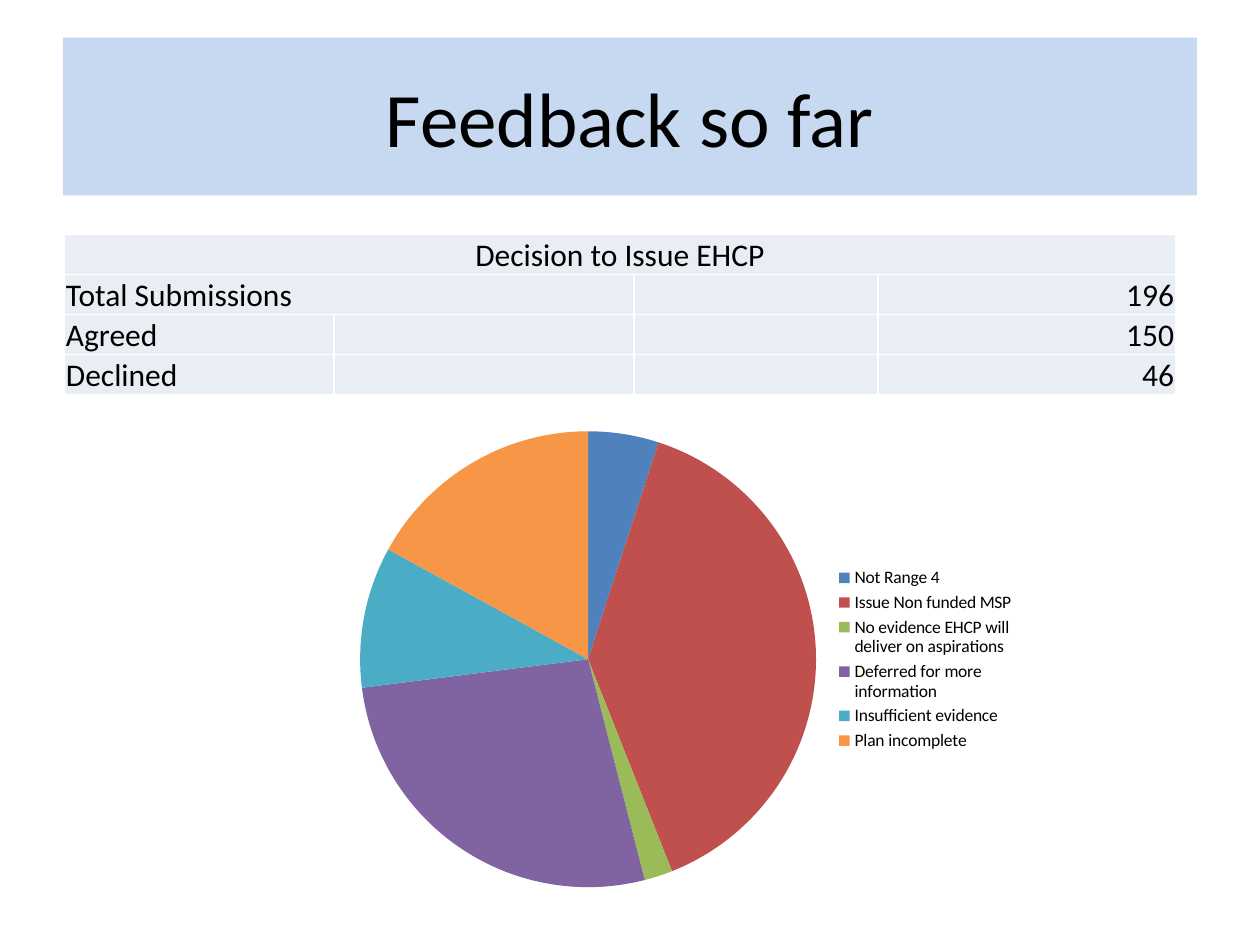
from lxml import etree
from pptx import Presentation
from pptx.chart.data import CategoryChartData
from pptx.dml.color import RGBColor
from pptx.enum.chart import XL_CHART_TYPE, XL_LEGEND_POSITION
from pptx.enum.shapes import MSO_SHAPE
from pptx.enum.text import MSO_ANCHOR, PP_ALIGN
from pptx.oxml import parse_xml
from pptx.oxml.ns import nsdecls
from pptx.util import Cm, Pt

PIE = XL_CHART_TYPE.PIE
LEGEND_RIGHT = XL_LEGEND_POSITION.RIGHT
RECTANGLE = MSO_SHAPE.RECTANGLE
MIDDLE, BOTTOM = MSO_ANCHOR.MIDDLE, MSO_ANCHOR.BOTTOM
LEFT, CENTER, RIGHT = PP_ALIGN.LEFT, PP_ALIGN.CENTER, PP_ALIGN.RIGHT

BLACK = RGBColor(0x00, 0x00, 0x00)
WHITE = RGBColor(0xFF, 0xFF, 0xFF)
BANNER_BLUE = RGBColor(0xC6, 0xD9, 0xF1)
CELL_GREY = RGBColor(0xE9, 0xED, 0xF4)
REASONS = {
    "Not Range 4": (5, RGBColor(0x4F, 0x81, 0xBD)),
    "Issue Non funded MSP": (39, RGBColor(0xC0, 0x50, 0x4D)),
    "No evidence EHCP will deliver on aspirations": (2, RGBColor(0x9B, 0xBB, 0x59)),
    "Deferred for more information": (27, RGBColor(0x80, 0x64, 0xA2)),
    "Insufficient evidence": (10, RGBColor(0x4B, 0xAC, 0xC6)),
    "Plan incomplete": (17, RGBColor(0xF7, 0x96, 0x46)),
}
DECISIONS = [("Total Submissions", 196), ("Agreed", 150), ("Declined", 46)]
COLUMN_SHARES = (2.14, 2.38, 1.94, 2.36)
CELL_FORMAT = {
    "margin_left": Cm(0.03),
    "margin_right": Cm(0.03),
    "margin_top": Cm(0.03),
    "margin_bottom": Cm(0),
    "vertical_anchor": BOTTOM,
}


def set_attributes(target, values):
    for name, value in values.items():
        setattr(target, name, value)


def style_font(font, size):
    set_attributes(font, {"name": "Calibri", "size": Pt(size), "bold": False})
    font.color.rgb = BLACK


def write_text(text_frame, text, size, alignment):
    paragraph = text_frame.paragraphs[0]
    paragraph.alignment = alignment
    run = paragraph.add_run()
    run.text = text
    style_font(run.font, size)


def add_banner(slide, left, top, width, height):
    shape = slide.shapes.add_shape(RECTANGLE, left, top, width, height)
    shape.shadow.inherit = False
    shape.fill.solid()
    shape.fill.fore_color.rgb = BANNER_BLUE
    shape.line.fill.background()
    shape.text_frame.vertical_anchor = MIDDLE
    write_text(shape.text_frame, "Feedback so far", 44, CENTER)


def add_borders(cell):
    properties = cell._tc.get_or_add_tcPr()
    for position, side in enumerate(("lnL", "lnR", "lnT", "lnB")):
        border = parse_xml(f'<a:{side} {nsdecls("a")} w="{Pt(1)}"/>')
        fill = etree.SubElement(border, border.tag.replace(side, "solidFill"))
        etree.SubElement(fill, border.tag.replace(side, "srgbClr"), val=str(WHITE))
        properties.insert(position, border)


def add_decision_table(slide, left, top, width, height):
    row_count = len(DECISIONS) + 1
    column_count = len(COLUMN_SHARES)
    frame = slide.shapes.add_table(row_count, column_count, left, top, width, height)
    table = frame.table
    for column, share in zip(table.columns, COLUMN_SHARES):
        column.width = int(width * share / sum(COLUMN_SHARES))
    for row in table.rows:
        row.height = height // row_count
    for cell in table.iter_cells():
        set_attributes(cell, CELL_FORMAT)
        cell.fill.solid()
        cell.fill.fore_color.rgb = CELL_GREY
        add_borders(cell)
    table.cell(0, 0).merge(table.cell(0, column_count - 1))
    table.cell(1, 0).merge(table.cell(1, 1))
    write_text(table.cell(0, 0).text_frame, "Decision to Issue EHCP", 18, CENTER)
    for row_index, (label, count) in enumerate(DECISIONS, 1):
        write_text(table.cell(row_index, 0).text_frame, label, 18, LEFT)
        count_cell = table.cell(row_index, column_count - 1)
        write_text(count_cell.text_frame, str(count), 18, RIGHT)


def add_reason_chart(slide, left, top, width, height):
    data = CategoryChartData()
    data.categories = list(REASONS)
    data.add_series("Series 1", [value for value, color in REASONS.values()])
    chart = slide.shapes.add_chart(PIE, left, top, width, height, data).chart
    set_attributes(chart, {"has_title": False, "has_legend": True})
    set_attributes(chart.legend, {"position": LEGEND_RIGHT, "include_in_layout": False})
    style_font(chart.font, 10)
    plot = chart.plots[0]
    plot.vary_by_categories = True
    for index, (value, color) in enumerate(REASONS.values()):
        fill = plot.series[0].points[index].format.fill
        fill.solid()
        fill.fore_color.rgb = color


def main():
    presentation = Presentation()
    set_attributes(presentation, {"slide_width": Cm(25.4), "slide_height": Cm(19.05)})
    slide = presentation.slides.add_slide(presentation.slide_layouts[6])
    add_banner(slide, Cm(1.27), Cm(0.76), Cm(22.86), Cm(3.18))
    add_decision_table(slide, Cm(1.3), Cm(4.73), Cm(22.4), Cm(3.2))
    add_reason_chart(slide, Cm(6.91), Cm(7.14), Cm(13.8), Cm(12.3))
    presentation.save("out.pptx")


if __name__ == "__main__":
    main()
